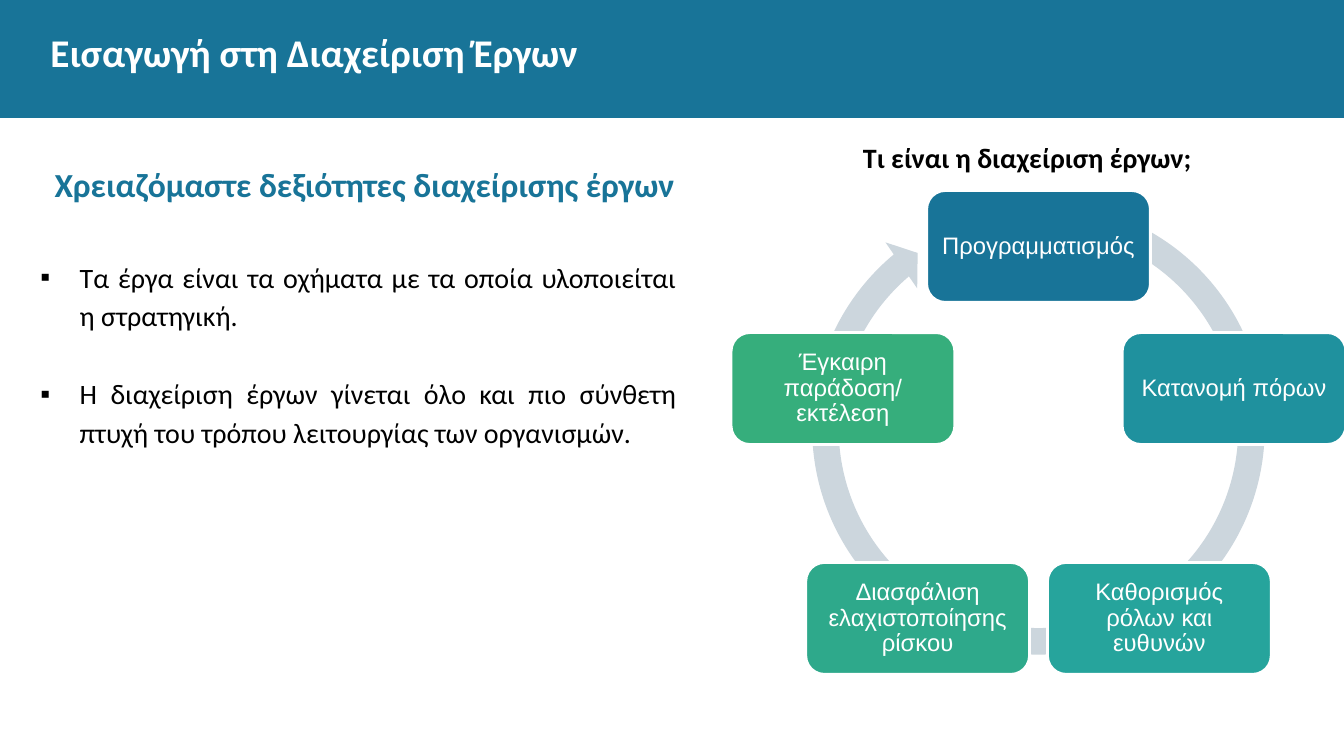
from math import cos, radians, sin

from lxml import etree
from pptx import Presentation
from pptx.dml.color import RGBColor
from pptx.enum.shapes import MSO_SHAPE
from pptx.enum.text import MSO_ANCHOR, MSO_AUTO_SIZE, PP_ALIGN
from pptx.oxml.ns import qn
from pptx.util import Inches, Pt

BAND, ROUNDED, ARROW = MSO_SHAPE.RECTANGLE, MSO_SHAPE.ROUNDED_RECTANGLE, MSO_SHAPE.CIRCULAR_ARROW
TOP, MIDDLE = MSO_ANCHOR.TOP, MSO_ANCHOR.MIDDLE
LEFT, CENTER, JUSTIFY = PP_ALIGN.LEFT, PP_ALIGN.CENTER, PP_ALIGN.JUSTIFY
COLORS = {
    "blue": "187498", "cyan": "1F919E", "teal": "26A49C", "sea": "2EA98B",
    "green": "36AE7C", "ring": "CCD6DD", "white": "FFFFFF", "black": "000000",
}

prs = Presentation()
prs.slide_width, prs.slide_height = Inches(13.33), Inches(7.5)
slide = prs.slides.add_slide(prs.slide_layouts[1])
shapes = slide.shapes


def area(left, top, width, height):
    """Turn percentages of the slide into left, top, width and height."""
    w, h = prs.slide_width, prs.slide_height
    return [int(share * side / 100) for share, side in zip((left, top, width, height), (w, h, w, h))]


def write(frame, text, size, color, font="Calibri", bold=False, align=LEFT, anchor=TOP,
          insets=(0.1, 0.05), spacing=1.0, before=0, indent=0, hanging=0, bullet=None, append=False):
    frame.word_wrap = True
    frame.auto_size = MSO_AUTO_SIZE.NONE
    frame.vertical_anchor = anchor
    frame.margin_left = frame.margin_right = Inches(insets[0])
    frame.margin_top = frame.margin_bottom = Inches(insets[1])
    paragraph = frame.add_paragraph() if append else frame.paragraphs[0]
    paragraph.alignment, paragraph.line_spacing = align, spacing
    paragraph.space_before, paragraph.space_after = Pt(before), Pt(0)
    props = paragraph._p.get_or_add_pPr()
    props.set("marL", str(Inches(indent)))
    props.set("indent", str(Inches(-hanging)))
    if bullet:
        etree.SubElement(props, qn("a:buChar")).set("char", bullet)
    else:
        etree.SubElement(props, qn("a:buNone"))
    run = paragraph.add_run()
    run.text = text
    run.font.name, run.font.size, run.font.bold = font, Pt(size), bold
    run.font.color.rgb = RGBColor.from_string(COLORS[color])


# Header band, behind the title
band = shapes.add_shape(BAND, *area(0, 0, 100, 15.6))
band.shadow.inherit = False
band.fill.solid()
band.fill.fore_color.rgb = RGBColor.from_string(COLORS["blue"])
band.line.fill.background()
shapes._spTree.insert(2, band._element)

title = shapes.title
title.left, title.top, title.width, title.height = area(3, 3.07, 92.27, 10.8)
write(title.text_frame, "Εισαγωγή στη Διαχείριση Έργων", 28, "white", bold=True)

# Skills heading and its bullets
skills = slide.placeholders[1]
skills.left, skills.top, skills.width, skills.height = area(2.18, 22.27, 48.16, 69.87)
write(skills.text_frame, "Χρειαζόμαστε δεξιότητες διαχείρισης έργων", 24, "blue", bold=True,
      align=JUSTIFY, insets=(0, 0), spacing=0.9, indent=0.25)
reasons = [
    ("Τα έργα είναι τα οχήματα με τα οποία υλοποιείται η στρατηγική.", 36),
    ("Η διαχείριση έργων γίνεται όλο και πιο σύνθετη πτυχή του τρόπου λειτουργίας των οργανισμών.", 28),
]
for reason, gap in reasons:
    write(skills.text_frame, reason, 20, "black", align=JUSTIFY, insets=(0, 0), spacing=1.15,
          before=gap, indent=0.5, hanging=0.39, bullet="▪", append=True)

# Project management cycle
ring = shapes.add_shape(ARROW, *area(59.34, 24.8, 35.86, 63.73))
for index, value in enumerate((0.055, 3.307, 137.963, 173.736, 0.058)):
    ring.adjustments[index] = value
ring.shadow.inherit = False
ring.fill.solid()
ring.fill.fore_color.rgb = RGBColor.from_string(COLORS["ring"])
ring.line.fill.background()

stages = [
    ("Προγραμματισμός", "blue"),
    ("Κατανομή πόρων", "cyan"),
    ("Καθορισμός ρόλων και ευθυνών", "teal"),
    ("Διασφάλιση ελαχιστοποίησης ρίσκου", "sea"),
    ("Έγκαιρη παράδοση/ εκτέλεση", "green"),
]
CENTER_X, CENTER_Y, RADIUS_X, RADIUS_Y = 77.27, 59.8, 15.3, 27.2
STAGE_W, STAGE_H = 16.65, 14.8
for index, (stage, color) in enumerate(stages):
    angle = radians(index * 360 / len(stages))
    x = CENTER_X + RADIUS_X * sin(angle) - STAGE_W / 2
    y = CENTER_Y - RADIUS_Y * cos(angle) - STAGE_H / 2
    box = shapes.add_shape(ROUNDED, *area(x, y, STAGE_W, STAGE_H))
    box.shadow.inherit = False
    box.fill.solid()
    box.fill.fore_color.rgb = RGBColor.from_string(COLORS[color])
    box.line.color.rgb = RGBColor.from_string(COLORS["white"])
    box.line.width = Pt(2)
    write(box.text_frame, stage, 17, "white", font="Arial", align=CENTER, anchor=MIDDLE,
          insets=(0.07, 0.07), spacing=0.9)

question = shapes.add_textbox(*area(63.47, 17.87, 28.06, 5.87))
write(question.text_frame, "Τι είναι η διαχείριση έργων;", 20, "black", bold=True)

prs.save("out.pptx")
